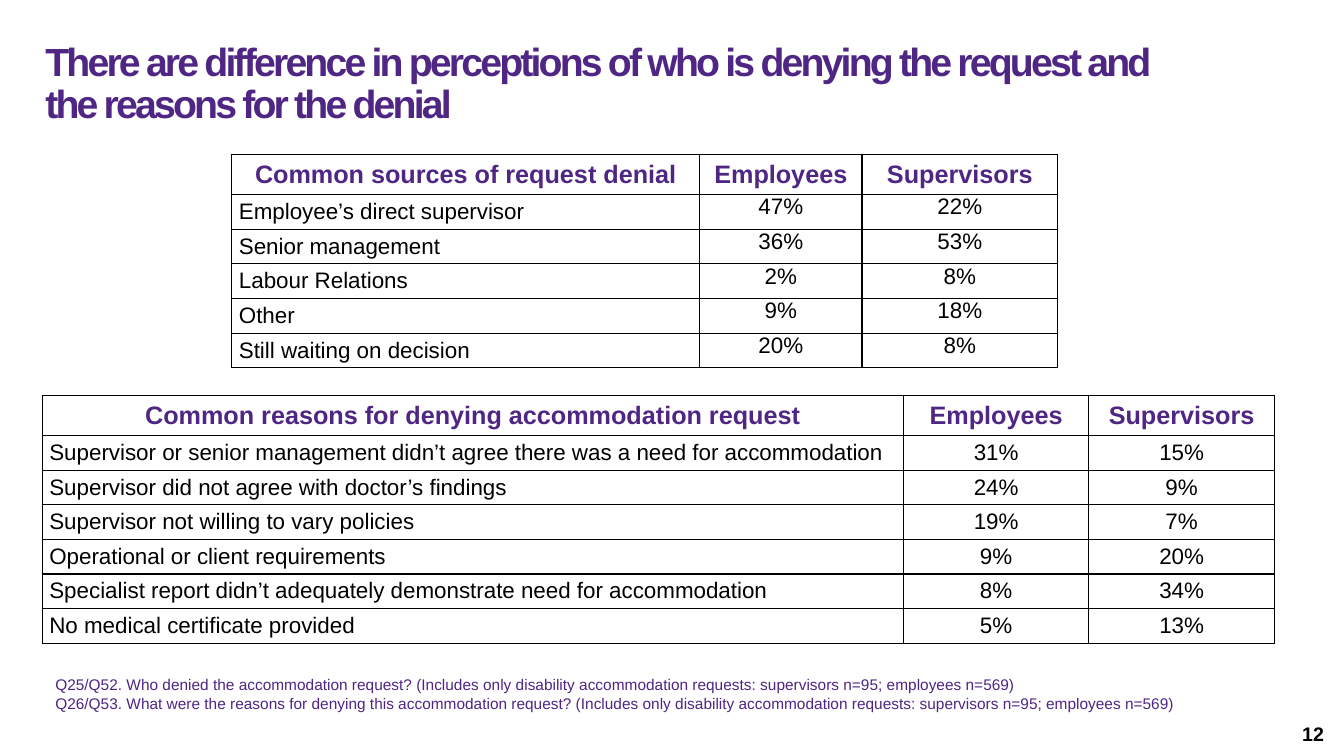
from lxml import etree
from pptx import Presentation
from pptx.dml.color import RGBColor
from pptx.enum import text
from pptx.oxml import ns
from pptx.util import Inches, Pt

COLORS = {"purple": "4F2684", "black": "000000", "white": "FFFFFF"}


def format_paragraph(paragraph, size, color, bold=False, align=text.PP_ALIGN.LEFT):
    paragraph.alignment = align
    for run in paragraph.runs:
        run.font.name = "Arial"
        run.font.size = Pt(size)
        run.font.bold = bold
        run.font.color.rgb = RGBColor.from_string(COLORS[color])


def add_border(cell):
    properties = cell._tc.get_or_add_tcPr()
    for index, side in enumerate(("lnL", "lnR", "lnT", "lnB")):
        line = etree.Element(ns.qn(f"a:{side}"), w=str(Pt(1)))
        fill = etree.SubElement(line, ns.qn("a:solidFill"))
        etree.SubElement(fill, ns.qn("a:srgbClr"), val=COLORS["black"])
        properties.insert(index, line)


presentation = Presentation()
presentation.slide_width = Inches(13.33)
presentation.slide_height = Inches(7.5)
slide = presentation.slides.add_slide(presentation.slide_layouts[5])

# Title
title = slide.shapes.title
title.left, title.top = Inches(0.45), Inches(0.4)
title.width, title.height = Inches(11.39), Inches(0.89)
frame = title.text_frame
frame.text = ("There are difference in perceptions of who is denying "
              "the request and the reasons for the denial")
frame.word_wrap = True
frame.auto_size = text.MSO_AUTO_SIZE.SHAPE_TO_FIT_TEXT
frame.vertical_anchor = text.MSO_ANCHOR.TOP
frame.margin_left = frame.margin_right = 0
frame.margin_top = frame.margin_bottom = Inches(0.02)
heading = frame.paragraphs[0]
heading.line_spacing = 0.9
format_paragraph(heading, 28, "purple", bold=True)
heading.runs[0].font._element.set("spc", "-200")

# Tables: left, top, height, column widths, anchor of the values, rows
HEADER_HEIGHT = 0.4
tables = [
    (2.3, 1.53, 2.12, (4.64, 1.61, 1.94), text.MSO_ANCHOR.TOP, [
        ("Common sources of request denial", "Employees", "Supervisors"),
        ("Employee’s direct supervisor", "47%", "22%"),
        ("Senior management", "36%", "53%"),
        ("Labour Relations", "2%", "8%"),
        ("Other", "9%", "18%"),
        ("Still waiting on decision", "20%", "8%"),
    ]),
    (0.42, 3.92, 2.46, (8.54, 1.84, 1.84), text.MSO_ANCHOR.MIDDLE, [
        ("Common reasons for denying accommodation request", "Employees", "Supervisors"),
        ("Supervisor or senior management didn’t agree there was a need for accommodation",
         "31%", "15%"),
        ("Supervisor did not agree with doctor’s findings", "24%", "9%"),
        ("Supervisor not willing to vary policies", "19%", "7%"),
        ("Operational or client requirements", "9%", "20%"),
        ("Specialist report didn’t adequately demonstrate need for accommodation",
         "8%", "34%"),
        ("No medical certificate provided", "5%", "13%"),
    ]),
]
for left, top, height, widths, value_anchor, rows in tables:
    table = slide.shapes.add_table(
        len(rows), len(widths), Inches(left), Inches(top),
        Inches(sum(widths)), Inches(height)).table
    table.horz_banding = False
    for column, width in zip(table.columns, widths):
        column.width = Inches(width)
    body_height = (height - HEADER_HEIGHT) / (len(rows) - 1)
    for row_index, values in enumerate(rows):
        is_header = row_index == 0
        table.rows[row_index].height = Inches(HEADER_HEIGHT if is_header else body_height)
        for column_index, value in enumerate(values):
            is_label = column_index == 0
            cell = table.cell(row_index, column_index)
            cell.text_frame.text = value
            cell.fill.solid()
            cell.fill.fore_color.rgb = RGBColor.from_string(COLORS["white"])
            add_border(cell)
            paragraph = cell.text_frame.paragraphs[0]
            if is_header:
                cell.vertical_anchor = text.MSO_ANCHOR.MIDDLE
                format_paragraph(paragraph, 18, "purple", True, text.PP_ALIGN.CENTER)
                continue
            cell.vertical_anchor = text.MSO_ANCHOR.MIDDLE if is_label else value_anchor
            cell.margin_left = cell.margin_right = Inches(0.07)
            cell.margin_top = cell.margin_bottom = 0
            paragraph.space_after = Pt(5.1)
            format_paragraph(paragraph, 16, "black",
                             align=text.PP_ALIGN.LEFT if is_label else text.PP_ALIGN.CENTER)

# Survey questions
questions = slide.shapes.add_textbox(
    Inches(0.45), Inches(6.65), Inches(11.39), Inches(0.47)).text_frame
questions.word_wrap = True
questions.auto_size = text.MSO_AUTO_SIZE.SHAPE_TO_FIT_TEXT
questions.text = (
    "Q25/Q52. Who denied the accommodation request? (Includes only disability "
    "accommodation requests: supervisors n=95; employees n=569)\n"
    "Q26/Q53. What were the reasons for denying this accommodation request? (Includes only "
    "disability accommodation requests: supervisors n=95; employees n=569)")
for paragraph in questions.paragraphs:
    format_paragraph(paragraph, 11, "purple")
    properties = paragraph._p.get_or_add_pPr()
    properties.set("marL", str(Inches(0.57)))
    properties.set("indent", str(-Inches(0.57)))

# Slide number
number = slide.shapes.add_textbox(
    Inches(10.23), Inches(7.08), Inches(3), Inches(0.4)).text_frame
number.word_wrap = True
number.vertical_anchor = text.MSO_ANCHOR.MIDDLE
number.text = "12"
format_paragraph(number.paragraphs[0], 14, "black", True, text.PP_ALIGN.RIGHT)

presentation.save("out.pptx")
